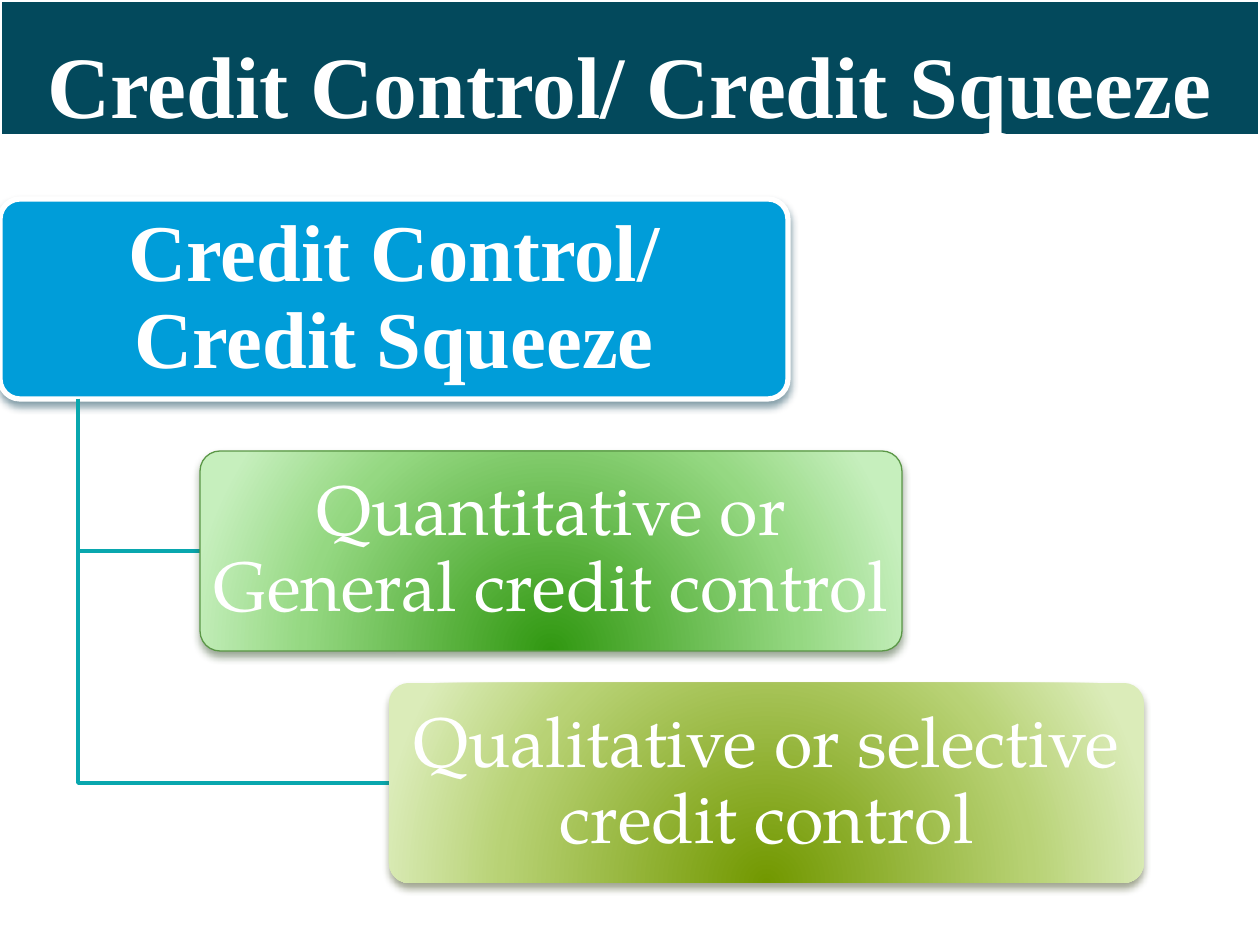
from lxml.etree import SubElement
from pptx import Presentation
from pptx.dml.color import RGBColor
from pptx.enum.shapes import MSO_SHAPE as SHAPE
from pptx.enum.text import MSO_ANCHOR as ANCHOR, PP_ALIGN as ALIGN
from pptx.oxml import parse_xml
from pptx.oxml.ns import nsdecls, qn
from pptx.util import Pt

PX = 914400 / 126

WHITE = RGBColor(0xFF, 0xFF, 0xFF)
NAVY = RGBColor(0x03, 0x49, 0x5C)
BLUE = RGBColor(0x00, 0x9D, 0xD9)
BLUE_SHADOW = RGBColor(0x00, 0x37, 0x4C)
TEAL = RGBColor(0x09, 0xA7, 0xAE)
GREENS = [RGBColor(0x31, 0x98, 0x11), RGBColor(0x95, 0xD8, 0x82), RGBColor(0xC6, 0xEF, 0xBD)]
GREEN_LINE = RGBColor(0x5B, 0x97, 0x47)
GREEN_SHADOW = RGBColor(0x2B, 0x48, 0x21)
OLIVES = [RGBColor(0x72, 0x98, 0x00), RGBColor(0xB8, 0xD2, 0x75), RGBColor(0xDB, 0xEC, 0xB9)]
OLIVE_SHADOW = RGBColor(0x3A, 0x45, 0x19)

HEAD_FONT = "Times New Roman"
BODY_FONT = "TeX Gyre Pagella"


def emu(px):
    return round(px * PX)


class Deck:
    def __init__(self, width, height):
        self.prs = Presentation()
        self.prs.slide_width, self.prs.slide_height = emu(width), emu(height)
        self.slide = self.prs.slides.add_slide(self.prs.slide_layouts[6])

    def panel(self, kind, box, fill, line=None, weight=1):
        """Add a shape; a list of colours as fill makes a radial gradient."""
        sp = self.slide.shapes.add_shape(kind, *map(emu, box))
        sp.shadow.inherit = False
        sp.fill.solid()
        if isinstance(fill, list):
            self.glow(sp, fill)
        else:
            sp.fill.fore_color.rgb = fill
        if line is None:
            sp.line.fill.background()
        else:
            sp.line.color.rgb = line
            sp.line.width = Pt(weight)
        return sp

    def glow(self, sp, colors):
        stops = "".join(
            f'<a:gs pos="{pos}"><a:srgbClr val="{color}"/></a:gs>'
            for pos, color in zip((0, 68000, 100000), colors))
        grad = parse_xml(
            f'<a:gradFill {nsdecls("a")} rotWithShape="1"><a:gsLst>{stops}</a:gsLst>'
            '<a:path path="circle"><a:fillToRect l="50000" t="130000" r="50000" b="-30000"/>'
            '</a:path></a:gradFill>')
        spPr = sp._element.spPr
        spPr.replace(spPr.find(qn("a:solidFill")), grad)

    def shadow(self, sp, color):
        effects = sp._element.spPr.find(qn("a:effectLst"))
        outer = SubElement(effects, qn("a:outerShdw"), blurRad=str(Pt(4.5)),
                           dist=str(Pt(3)), dir="5400000", rotWithShape="0")
        clr = SubElement(outer, qn("a:srgbClr"), val=str(color))
        SubElement(clr, qn("a:alpha"), val="48000")

    def text(self, sp, words, font, size, bold=False, anchor=ANCHOR.MIDDLE,
             spacing=0.9, inset=(4, 2)):
        tf = sp.text_frame
        tf.text = words
        tf.word_wrap = True
        tf.vertical_anchor = anchor
        tf.margin_left = tf.margin_right = emu(inset[0])
        tf.margin_top = tf.margin_bottom = emu(inset[1])
        p = tf.paragraphs[0]
        p.alignment = ALIGN.CENTER
        p.line_spacing = spacing
        r = p.runs[0]
        r.font.name, r.font.size, r.font.bold = font, Pt(size), bold
        r.font.color.rgb = WHITE

    def title(self, box, words):
        sp = self.panel(SHAPE.RECTANGLE, box, NAVY, WHITE, 2.25)
        self.text(sp, words, HEAD_FONT, 50, True, ANCHOR.BOTTOM, 1.0, (0, 0))

    def node(self, box, words, fill, shadow, font, size, bold=False, line=None, weight=1):
        sp = self.panel(SHAPE.ROUNDED_RECTANGLE, box, fill, line, weight)
        sp.adjustments[0] = 0.1
        self.shadow(sp, shadow)
        self.text(sp, words, font, size, bold)

    def elbow(self, x, top, box):
        """Draw a branch down from (x, top) to the middle of the box's left side."""
        left, y = box[0], box[1] + box[3] // 2
        fb = self.slide.shapes.build_freeform(emu(x), emu(top))
        fb.add_line_segments([(emu(x), emu(y)), (emu(left), emu(y))], close=False)
        sp = fb.convert_to_shape()
        sp.shadow.inherit = False
        sp.fill.background()
        sp.line.color.rgb = TEAL
        sp.line.width = Pt(2)


def main():
    s = Deck(1260, 945)

    # Title band
    s.title((0, 0, 1260, 136), "Credit Control/ Credit Squeeze")

    # Root of the hierarchy
    root = (0, 199, 788, 200)
    s.node(root, "Credit Control/ Credit Squeeze", BLUE, BLUE_SHADOW,
           HEAD_FONT, 46, True, WHITE, 3)

    # Branches, each with its elbow line
    branches = [
        ((200, 451, 702, 200), "Quantitative or General credit control",
         GREENS, GREEN_SHADOW, GREEN_LINE),
        ((389, 683, 755, 200), "Qualitative or selective credit control",
         OLIVES, OLIVE_SHADOW, None),
    ]
    for box, words, fill, shadow, line in branches:
        s.elbow(root[2] // 10, root[1] + root[3], box)
        s.node(box, words, fill, shadow, BODY_FONT, 40, line=line, weight=0.75)

    s.prs.save("out.pptx")


if __name__ == "__main__":
    main()
